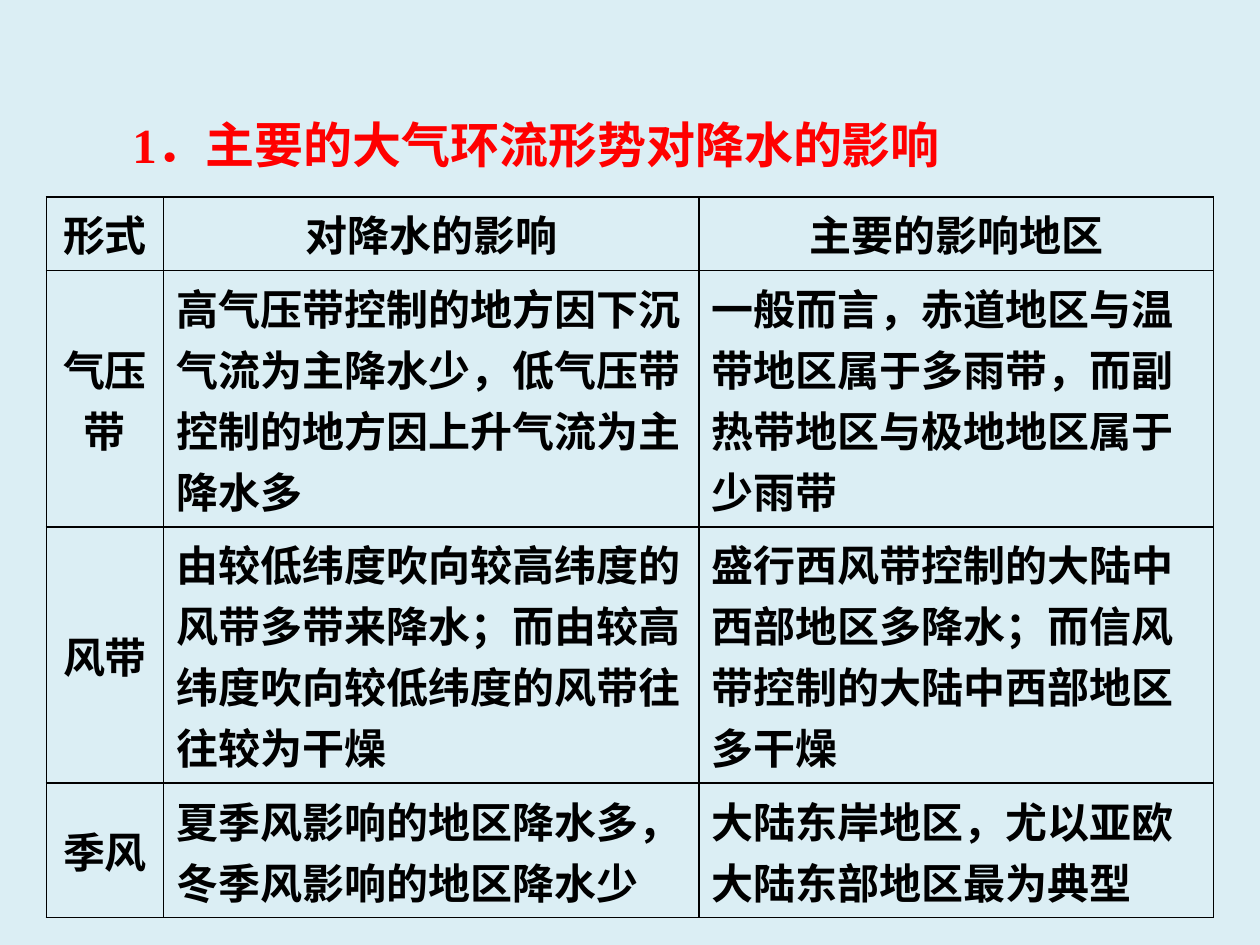
"""Build a slide with a table on how atmospheric circulation affects precipitation."""
from lxml.etree import SubElement
from pptx import Presentation
from pptx.dml.color import RGBColor
from pptx.enum.text import MSO_ANCHOR, MSO_AUTO_SIZE, PP_ALIGN
from pptx.oxml.ns import qn
from pptx.util import Pt


def style(para, size, color, align):
    para.alignment = align
    font = para.font
    font.name = "Times New Roman"
    font.size = Pt(size)
    font.bold = True
    font.color.rgb = RGBColor.from_string(color)


def border(cell, color):
    props = cell._tc.get_or_add_tcPr()
    for side in ("lnL", "lnR", "lnT", "lnB"):
        line = SubElement(props, qn(f"a:{side}"), w=str(Pt(1)))
        fill = SubElement(line, qn("a:solidFill"))
        SubElement(fill, qn("a:srgbClr"), val=color)


deck = Presentation()
deck.slide_width, deck.slide_height = Pt(720), Pt(540)
slide = deck.slides.add_slide(deck.slide_layouts[5])
back = slide.background.fill
back.solid()
back.fore_color.rgb = RGBColor.from_string("DBEEF4")

title = slide.shapes.title
title.left, title.top, title.width, title.height = Pt(19.5), Pt(62), Pt(553.5), Pt(47.5)
frame = title.text_frame
frame.text = "1．主要的大气环流形势对降水的影响"
frame.word_wrap = True
frame.auto_size = MSO_AUTO_SIZE.NONE
frame.vertical_anchor = MSO_ANCHOR.TOP
head = frame.paragraphs[0]
style(head, 28, "FF0000", PP_ALIGN.LEFT)
head._p.get_or_add_pPr().set("indent", str(Pt(49)))

rows = [
    ("形式", "对降水的影响", "主要的影响地区"),
    ("气压带",
     "高气压带控制的地方因下沉气流为主降水少，低气压带控制的地方因上升气流为主降水多",
     "一般而言，赤道地区与温带地区属于多雨带，而副热带地区与极地地区属于少雨带"),
    ("风带",
     "由较低纬度吹向较高纬度的风带多带来降水；而由较高纬度吹向较低纬度的风带往往较为干燥",
     "盛行西风带控制的大陆中西部地区多降水；而信风带控制的大陆中西部地区多干燥"),
    ("季风",
     "夏季风影响的地区降水多，冬季风影响的地区降水少",
     "大陆东岸地区，尤以亚欧大陆东部地区最为典型"),
]
widths = [67, 306, 294]
heights = [42, 143.5, 143.5, 76]
table = slide.shapes.add_table(
    len(rows), len(widths), Pt(26.5), Pt(112.5), Pt(sum(widths)), Pt(sum(heights))).table
for col, width in zip(table.columns, widths):
    col.width = Pt(width)
for r, (texts, height) in enumerate(zip(rows, heights)):
    table.rows[r].height = Pt(height)
    for c, text in enumerate(texts):
        cell = table.cell(r, c)
        cell.text = text
        cell.vertical_anchor = MSO_ANCHOR.MIDDLE
        border(cell, "000000")
        cell.fill.background()
        align = PP_ALIGN.LEFT if r and c else PP_ALIGN.CENTER
        style(cell.text_frame.paragraphs[0], 24, "000000", align)

deck.save("out.pptx")
